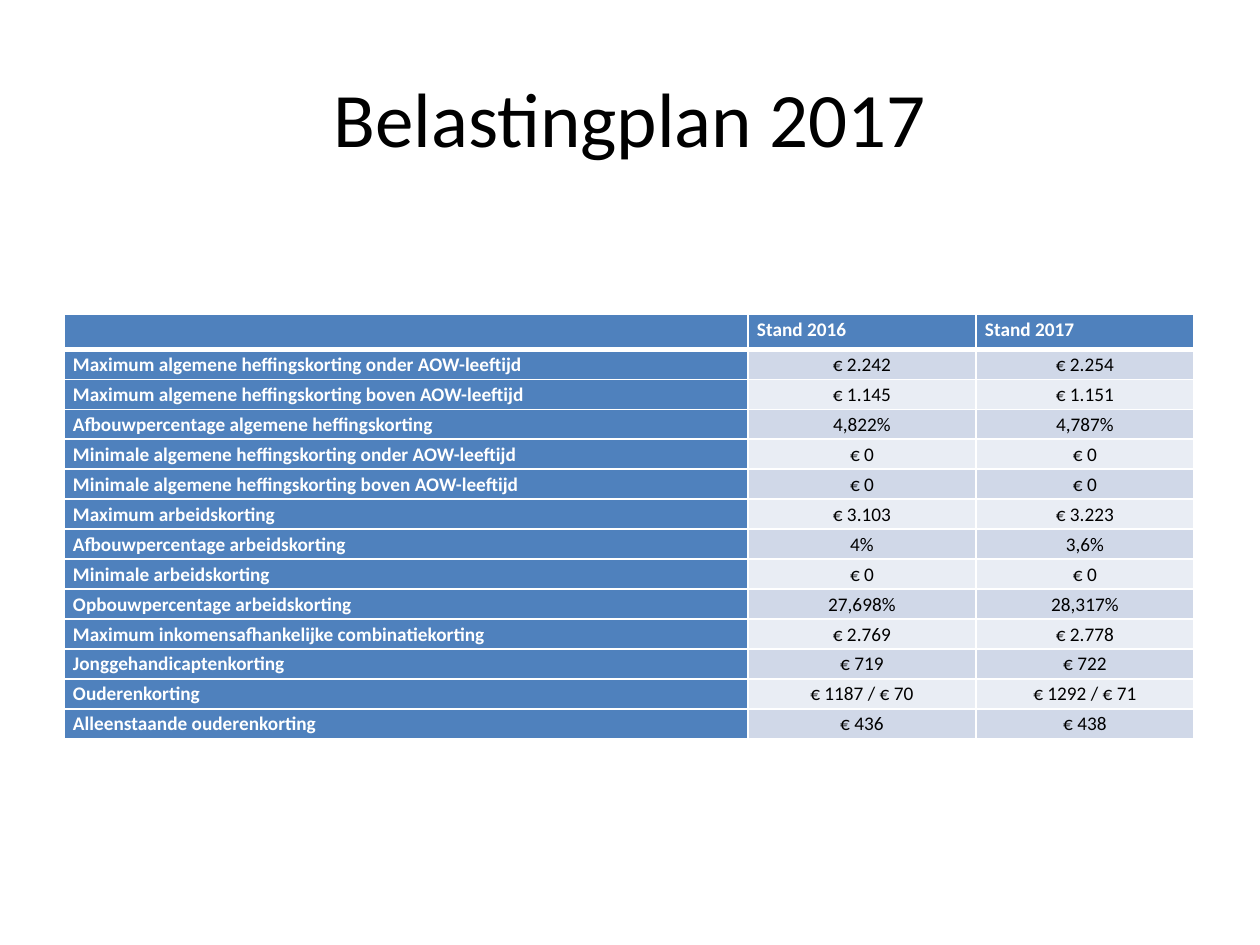
"""Build the slide with the Dutch tax credits of 2016 and 2017."""
from lxml.etree import SubElement
from pptx import Presentation
from pptx.dml.color import RGBColor
from pptx.enum.text import MSO_ANCHOR as Anchor, PP_ALIGN as Align
from pptx.oxml.ns import qn
from pptx.util import Pt

PX = 914400 // 126
COLORS = {"blue": "4F81BD", "dark band": "D0D8E8", "light band": "E9EDF4",
          "white": "FFFFFF", "black": "000000"}
COLUMN_WIDTHS = [684, 228, 218]
ROW_HEIGHT = 30
ROWS = [
    ("", "Stand 2016", "Stand 2017"),
    ("Maximum algemene heffingskorting onder AOW-leeftijd", "€ 2.242", "€ 2.254"),
    ("Maximum algemene heffingskorting boven AOW-leeftijd", "€ 1.145", "€ 1.151"),
    ("Afbouwpercentage algemene heffingskorting", "4,822%", "4,787%"),
    ("Minimale algemene heffingskorting onder AOW-leeftijd", "€ 0", "€ 0"),
    ("Minimale algemene heffingskorting boven AOW-leeftijd", "€ 0", "€ 0"),
    ("Maximum arbeidskorting", "€ 3.103", "€ 3.223"),
    ("Afbouwpercentage arbeidskorting", "4%", "3,6%"),
    ("Minimale arbeidskorting", "€ 0", "€ 0"),
    ("Opbouwpercentage arbeidskorting", "27,698%", "28,317%"),
    ("Maximum inkomensafhankelijke combinatiekorting", "€ 2.769", "€ 2.778"),
    ("Jonggehandicaptenkorting", "€ 719", "€ 722"),
    ("Ouderenkorting", "€ 1187 / € 70", "€ 1292 / € 71"),
    ("Alleenstaande ouderenkorting", "€ 436", "€ 438"),
]


def write(frame, text, size=11, color="black", bold=False, align=Align.CENTER):
    """Put one formatted run in the first paragraph and return the paragraph."""
    para = frame.paragraphs[0]
    para.alignment = align
    span = para.add_run()
    span.text = text
    span.font.name = "Calibri"
    span.font.size = Pt(size)
    span.font.bold = bold
    span.font.color.rgb = RGBColor.from_string(COLORS[color])
    return para


def add_border(cell, side, points):
    """Draw a white line along one side of a table cell."""
    line = SubElement(cell._tc.get_or_add_tcPr(), qn(f"a:ln{side}"), w=str(Pt(points)))
    SubElement(SubElement(line, qn("a:solidFill")), qn("a:srgbClr"), val=COLORS["white"])


deck = Presentation()
deck.slide_width, deck.slide_height = 1260 * PX, 945 * PX
page = deck.slides.add_slide(deck.slide_layouts[5])

title = page.shapes.title
title.left, title.top, title.width, title.height = 63 * PX, 38 * PX, 1134 * PX, 158 * PX
title.text_frame.vertical_anchor = Anchor.MIDDLE
write(title.text_frame, "Belastingplan 2017", size=44)

table = page.shapes.add_table(
    len(ROWS), len(COLUMN_WIDTHS), 64 * PX, 314 * PX,
    sum(COLUMN_WIDTHS) * PX, len(ROWS) * ROW_HEIGHT * PX).table
for column, width in zip(table.columns, COLUMN_WIDTHS):
    column.width = width * PX

for row_index, texts in enumerate(ROWS):
    table.rows[row_index].height = ROW_HEIGHT * PX
    for column_index, text in enumerate(texts):
        cell = table.cell(row_index, column_index)
        is_header = row_index == 0
        is_heading = is_header or column_index == 0
        cell.margin_left = cell.margin_right = 9 * PX
        cell.margin_top = cell.margin_bottom = 0
        para = write(cell.text_frame, text, bold=is_heading,
                     color="white" if is_heading else "black",
                     align=Align.LEFT if is_heading else Align.CENTER)
        para.line_spacing = 1.15
        para.space_before = Pt(12)
        add_border(cell, "L", 1)
        add_border(cell, "R", 1)
        add_border(cell, "T", 3 if row_index == 1 else 1)
        add_border(cell, "B", 3 if is_header else 1)
        band = "dark band" if row_index % 2 else "light band"
        cell.fill.solid()
        cell.fill.fore_color.rgb = RGBColor.from_string(COLORS["blue" if is_heading else band])

deck.save("out.pptx")
